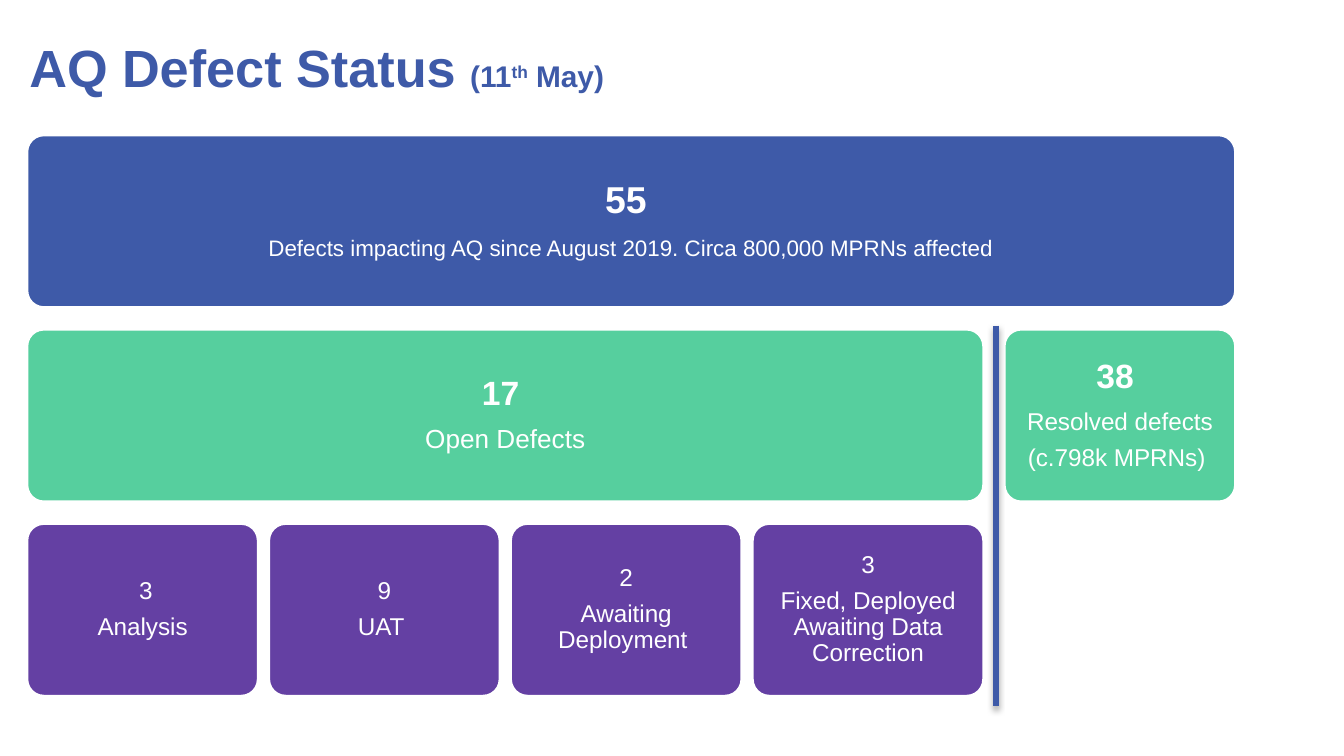
from lxml import etree
from pptx import Presentation
from pptx.dml.color import RGBColor
from pptx.enum.shapes import MSO_CONNECTOR, MSO_SHAPE
from pptx.enum.text import MSO_ANCHOR, MSO_AUTO_SIZE, PP_ALIGN
from pptx.oxml.ns import nsdecls
from pptx.util import Cm, Pt

ROUNDED = MSO_SHAPE.ROUNDED_RECTANGLE
STRAIGHT = MSO_CONNECTOR.STRAIGHT
MIDDLE = MSO_ANCHOR.MIDDLE
NO_FIT = MSO_AUTO_SIZE.NONE
LEFT, CENTER = PP_ALIGN.LEFT, PP_ALIGN.CENTER

COLORS = {"blue": "3E5AA8", "green": "56CF9E", "purple": "6440A3", "white": "FFFFFF"}
FONT = "Arial"


def rgb(name):
    return RGBColor.from_string(COLORS[name])


def add_card(slide, left, top, width, height, color, inset, lines):
    """Rounded card; lines holds (text, size, bold) for each paragraph."""
    sp = slide.shapes.add_shape(ROUNDED, Cm(left), Cm(top), Cm(width), Cm(height))
    sp.adjustments[0] = 0.1
    sp.shadow.inherit = False
    sp.fill.solid()
    sp.fill.fore_color.rgb = rgb(color)
    sp.line.color.rgb = rgb("white")
    sp.line.width = Pt(2)
    tf = sp.text_frame
    tf.word_wrap = True
    tf.vertical_anchor = MIDDLE
    tf.margin_left = tf.margin_right = tf.margin_top = tf.margin_bottom = Cm(inset)
    for i, (text, size, bold) in enumerate(lines):
        p = tf.paragraphs[0] if i == 0 else tf.add_paragraph()
        p.text = text
        p.alignment = CENTER
        p.line_spacing = 0.9
        p.space_after = Pt(round(size * 0.4, 1))
        p.font.name = FONT
        p.font.size = Pt(size)
        p.font.bold = bold
        p.font.color.rgb = rgb("white")


prs = Presentation()
prs.slide_width, prs.slide_height = Cm(25.4), Cm(14.28)
s = prs.slides.add_slide(prs.slide_layouts[5])

# Title
title = s.shapes.title
title.left, title.top, title.width, title.height = Cm(0.3), Cm(0.36), Cm(23.83), Cm(1.78)
tf = title.text_frame
tf.auto_size = NO_FIT
tf.vertical_anchor = MIDDLE
p = tf.paragraphs[0]
p.alignment = LEFT
p.font.name = FONT
p.font.bold = True
p.font.color.rgb = rgb("blue")
for text, size in [("AQ Defect Status ", 28), ("(11", 16), ("th", 16), (" May)", 16)]:
    r = p.add_run()
    r.text = text
    r.font.size = Pt(size)
    if text == "th":
        r.font._element.set("baseline", "30000")

# Card grid
LEFT_EDGE, TOP_EDGE, FULL_W = 0.5, 2.54, 22.86
CARD_W, CARD_H = 4.39, 3.28
COL_STEP, ROW_STEP = 4.57, 3.67
open_w = 3 * COL_STEP + CARD_W
resolved_left = LEFT_EDGE + FULL_W - CARD_W
row_2, row_3 = TOP_EDGE + ROW_STEP, TOP_EDGE + 2 * ROW_STEP

# All defects
add_card(s, LEFT_EDGE, TOP_EDGE, FULL_W, CARD_H, "blue", 0.2, [
    ("55 ", 20, True),
    ("Defects impacting AQ since August 2019. Circa 800,000 MPRNs affected", 12, False)])

# Open and resolved defects
add_card(s, LEFT_EDGE, row_2, open_w, CARD_H, "green", 0.18,
         [("17 ", 18, True), ("Open Defects", 14, False)])
add_card(s, resolved_left, row_2, CARD_W, CARD_H, "green", 0.18,
         [("38 ", 18, True), ("Resolved defects", 13, False), ("(c.798k MPRNs) ", 13, False)])

# Stages of the open defects
stages = [(" 3", "Analysis"), ("9", "UAT "), ("2", "Awaiting Deployment "),
          ("3", "Fixed, Deployed Awaiting Data Correction")]
for i, (count, stage) in enumerate(stages):
    add_card(s, LEFT_EDGE + i * COL_STEP, row_3, CARD_W, CARD_H, "purple", 0.13,
             [(count, 13, False), (stage, 13, False)])

# Divider with a soft shadow
divider = s.shapes.add_connector(STRAIGHT, Cm(18.82), Cm(6.15), Cm(18.82), Cm(13.34))
divider.line.color.rgb = rgb("blue")
divider.line.width = Pt(3)
divider._element.spPr.append(etree.fromstring(
    f'<a:effectLst {nsdecls("a")}>'
    '<a:outerShdw blurRad="40000" dist="23000" dir="5400000" rotWithShape="0">'
    '<a:srgbClr val="000000"><a:alpha val="35000"/></a:srgbClr>'
    '</a:outerShdw></a:effectLst>'))

prs.save("out.pptx")
